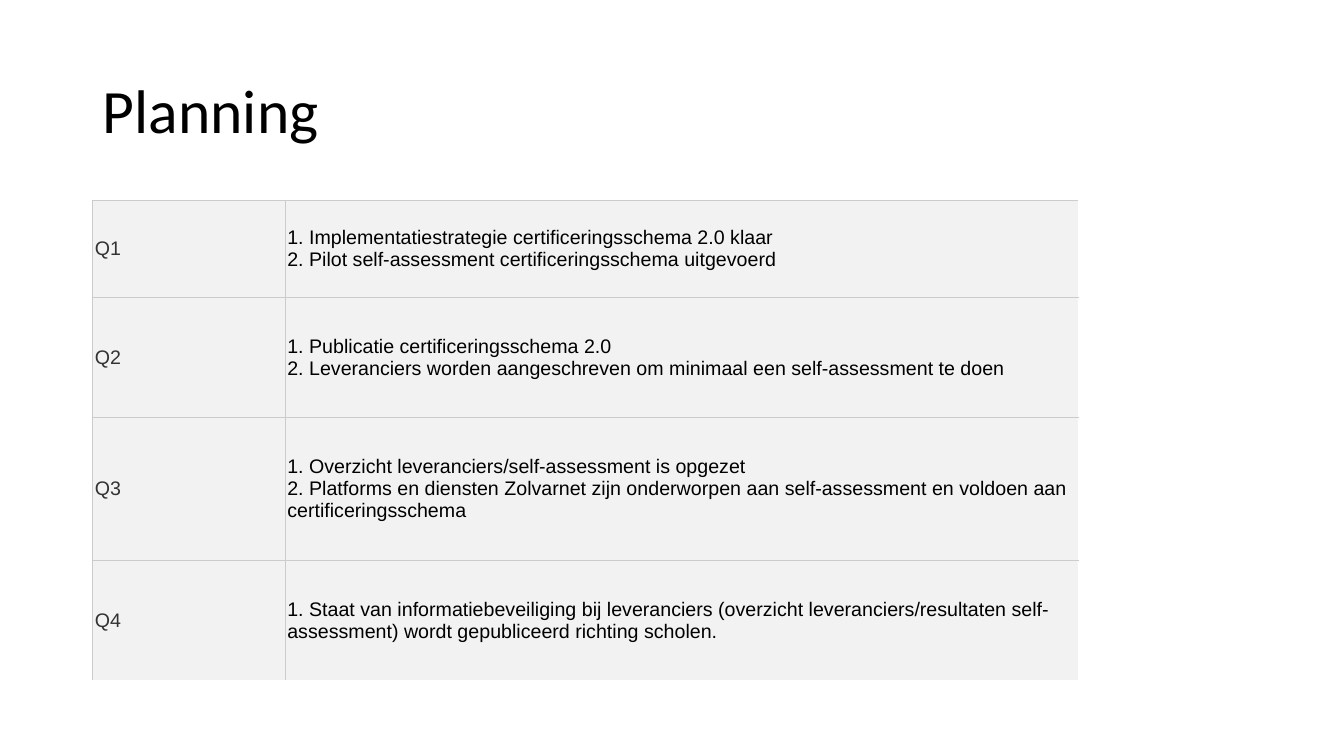
"""Build the quarterly planning slide."""
from dataclasses import dataclass

from lxml.etree import SubElement
from pptx import Presentation
from pptx.dml.color import RGBColor
from pptx.enum.text import MSO_ANCHOR as Anchor, PP_ALIGN as Align
from pptx.oxml.ns import qn
from pptx.util import Inches, Pt

COLORS = {
    "title": "000000",
    "quarter": "333333",
    "goals": "000000",
    "cell": "F2F2F2",
    "grid": "CCCCCC",
    "open_edge": "FFFFFF",
}
COLUMN_WIDTHS = (1.91, 7.87)


@dataclass(frozen=True)
class Quarter:
    """One row of the planning."""
    label: str
    goals: tuple[str, ...]
    height: float


QUARTERS = (
    Quarter("Q1", ("1. Implementatiestrategie certificeringsschema 2.0 klaar",
                   "2. Pilot self-assessment certificeringsschema uitgevoerd"), 0.96),
    Quarter("Q2", ("1. Publicatie certificeringsschema 2.0",
                   "2. Leveranciers worden aangeschreven om minimaal een "
                   "self-assessment te doen"), 1.19),
    Quarter("Q3", ("1. Overzicht leveranciers/self-assessment is opgezet",
                   "2. Platforms en diensten Zolvarnet zijn onderworpen aan "
                   "self-assessment en voldoen aan certificeringsschema"), 1.42),
    Quarter("Q4", ("1. Staat van informatiebeveiliging bij leveranciers (overzicht "
                   "leveranciers/resultaten self-assessment) wordt gepubliceerd "
                   "richting scholen.",), 1.19),
)


def add_run(paragraph, text: str, font: str, size: float, color: str) -> None:
    """Append a formatted run to the paragraph."""
    run = paragraph.add_run()
    run.text = text
    run.font.name = font
    run.font.size = Pt(size)
    run.font.bold = False
    run.font.color.rgb = RGBColor.from_string(COLORS[color])


def set_border(cell, side: str, color: str) -> None:
    """Draw one side of the cell; side is L, R, T or B."""
    border = SubElement(cell._tc.get_or_add_tcPr(), qn(f"a:ln{side}"), w=str(Pt(0.6)))
    fill = SubElement(border, qn("a:solidFill"))
    SubElement(fill, qn("a:srgbClr"), val=COLORS[color])


def fill_cell(cell, lines: tuple[str, ...], color: str, open_sides: str) -> None:
    """Write the lines into the cell and format it."""
    cell.margin_left = cell.margin_right = Inches(0.02)
    cell.margin_top = cell.margin_bottom = Inches(0.01)
    cell.vertical_anchor = Anchor.MIDDLE
    for side in "LRTB":
        set_border(cell, side, "open_edge" if side in open_sides else "grid")
    cell.fill.solid()
    cell.fill.fore_color.rgb = RGBColor.from_string(COLORS["cell"])
    paragraph = cell.text_frame.paragraphs[0]
    for index, line in enumerate(lines):
        if index:
            paragraph.add_line_break()
        add_run(paragraph, line, "Arial", 14, color)


def add_title(slide, text: str) -> None:
    """Place and format the title placeholder."""
    title = slide.shapes.title
    title.left, title.top = Inches(0.92), Inches(0.4)
    title.width, title.height = Inches(11.5), Inches(1.45)
    title.text_frame.vertical_anchor = Anchor.MIDDLE
    paragraph = title.text_frame.paragraphs[0]
    paragraph.alignment = Align.LEFT
    paragraph.line_spacing = 0.9
    add_run(paragraph, text, "Calibri", 44, "title")


def add_planning(slide, quarters: tuple[Quarter, ...]) -> None:
    """Add the table with a row for each quarter."""
    planning = slide.shapes.add_table(
        len(quarters), len(COLUMN_WIDTHS), Inches(0.92), Inches(1.99),
        Inches(sum(COLUMN_WIDTHS)), Inches(sum(q.height for q in quarters))).table
    planning.first_row = planning.horz_banding = False
    for column, width in zip(planning.columns, COLUMN_WIDTHS):
        column.width = Inches(width)
    for row, quarter in zip(planning.rows, quarters):
        row.height = Inches(quarter.height)
        bottom = "B" if quarter is quarters[-1] else ""
        label_cell, goals_cell = row.cells
        fill_cell(label_cell, (quarter.label,), "quarter", bottom)
        fill_cell(goals_cell, quarter.goals, "goals", "R" + bottom)


def main() -> None:
    """Create and save the presentation."""
    deck = Presentation()
    deck.slide_width, deck.slide_height = Inches(13.33), Inches(7.5)
    slide = deck.slides.add_slide(deck.slide_layouts[5])
    add_title(slide, "Planning")
    add_planning(slide, QUARTERS)
    deck.save("out.pptx")


if __name__ == "__main__":
    main()
